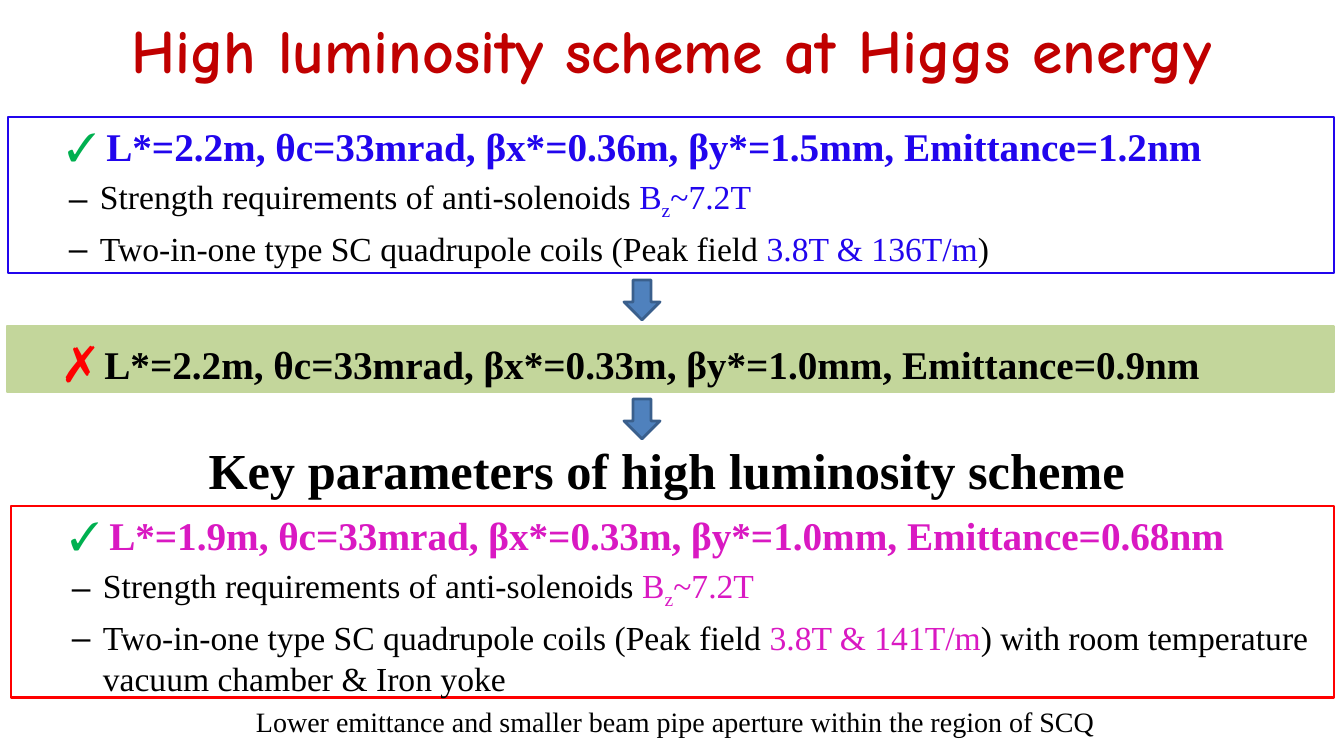
from lxml import etree
from pptx import Presentation
from pptx.dml.color import RGBColor
from pptx.enum.shapes import MSO_SHAPE
from pptx.enum.text import MSO_ANCHOR, PP_ALIGN
from pptx.oxml.ns import qn
from pptx.util import Emu, Pt

RECT, DOWN = MSO_SHAPE.RECTANGLE, MSO_SHAPE.DOWN_ARROW
TOP, MID = MSO_ANCHOR.TOP, MSO_ANCHOR.MIDDLE
LEFT, CENTER = PP_ALIGN.LEFT, PP_ALIGN.CENTER

BLACK = RGBColor(0, 0, 0)
RED = RGBColor(0xFF, 0, 0)
CRIMSON = RGBColor(0xC0, 0, 0)
GREEN = RGBColor(0, 0xB0, 0x50)
BLUE = RGBColor(0x21, 0x05, 0xED)
PINK = RGBColor(0xD9, 0x19, 0xC2)
OLIVE = RGBColor(0xC3, 0xD6, 0x9B)
STEEL = RGBColor(0x4F, 0x81, 0xBD)
NAVY = RGBColor(0x3A, 0x5F, 0x8C)
SERIF, COMIC = "Times New Roman", "Comic Neue"

TITLES = [
    ("High luminosity scheme at Higgs energy", (22, 7, 1300, 85),
     dict(size=44, font=COMIC, color=CRIMSON, bold=True, before=12, after=6)),
    ("Key parameters of high luminosity scheme", (12, 434, 1310, 72),
     dict(size=36, bold=True)),
    ("Lower emittance and smaller beam pipe aperture within the region of SCQ",
     (148, 700, 1055, 44), dict(size=20)),
]
SCHEMES = [
    dict(box=(8, 117, 1326, 156), edge=BLUE, color=BLUE,
         head="L*=2.2m, θc=33mrad, βx*=0.36m, βy*=1.5mm, Emittance=1.2nm",
         peak="3.8T & 136T/m", tail=")"),
    dict(box=(11, 506, 1323, 192), edge=RED, color=PINK,
         head="L*=1.9m, θc=33mrad, βx*=0.33m, βy*=1.0mm, Emittance=0.68nm",
         peak="3.8T & 141T/m",
         tail=") with room temperature vacuum chamber & Iron yoke"),
]
BAND = (7, 326, 1327, 66)
FAILED = "L*=2.2m, θc=33mrad, βx*=0.33m, βy*=1.0mm, Emittance=0.9nm"
ARROWS = [(624, 280, 36, 40), (624, 399, 36, 40)]
INDENT, HANG, STEP = 49, 82, 31


def px(n):
    return Emu(round(n * 914400 / 100.8))


def write(par, text, size=24, font=SERIF, color=BLACK, bold=False, base=0,
          align=LEFT, before=0, after=0):
    par.alignment = align
    par.space_before, par.space_after = Pt(before), Pt(after)
    run = par.add_run()
    run.text = text
    run.font.size, run.font.name, run.font.bold = Pt(size), font, bold
    run.font.color.rgb = color
    if base:
        run._r.get_or_add_rPr().set("baseline", str(base))


def inset(par, left, hang=0, mark=None):
    prop = par._p.get_or_add_pPr()
    prop.set("marL", str(px(left)))
    prop.set("indent", str(-px(hang)))
    if mark:
        etree.SubElement(prop, qn("a:buFont")).set("typeface", "Arial")
        etree.SubElement(prop, qn("a:buChar")).set("char", mark)


def draw(kind, box, edge, fill=None, anchor=MID):
    shape = slide.shapes.add_shape(kind, *map(px, box))
    shape.shadow.inherit = False
    if fill is None:
        shape.fill.background()
    else:
        shape.fill.solid()
        shape.fill.fore_color.rgb = fill
    shape.line.color.rgb, shape.line.width = edge, Pt(2)
    shape.text_frame.word_wrap = True
    shape.text_frame.vertical_anchor = anchor
    return shape.text_frame


deck = Presentation()
deck.slide_width, deck.slide_height = px(1344), px(756)
slide = deck.slides.add_slide(deck.slide_layouts[6])

for text, box, form in TITLES:
    frame = slide.shapes.add_textbox(*map(px, box)).text_frame
    frame.word_wrap = True
    write(frame.paragraphs[0], text, align=CENTER, **form)

for plan in SCHEMES:
    hue = plan["color"]
    frame = draw(RECT, plan["box"], plan["edge"], anchor=TOP)
    head = frame.paragraphs[0]
    write(head, "✓ ", size=28, color=GREEN, bold=True, before=5.6)
    write(head, plan["head"], size=28, color=hue, bold=True, before=5.6)
    inset(head, INDENT)
    points = [
        [("Strength requirements of anti-solenoids ", BLACK, 0),
         ("B", hue, 0), ("z", hue, -25000), ("~7.2T", hue, 0)],
        [("Two-in-one type SC quadrupole coils (Peak field ", BLACK, 0),
         (plan["peak"], hue, 0), (plan["tail"], BLACK, 0)],
    ]
    for point in points:
        par = frame.add_paragraph()
        for text, color, base in point:
            write(par, text, color=color, base=base, before=4.8)
        inset(par, HANG, STEP, "–")

par = draw(RECT, BAND, OLIVE, OLIVE).paragraphs[0]
write(par, "✗", size=36, color=RED, bold=True)
write(par, " ", size=28, bold=True)
write(par, FAILED, size=28, bold=True)
inset(par, INDENT)

for box in ARROWS:
    draw(DOWN, box, NAVY, STEEL)

deck.save("out.pptx")
